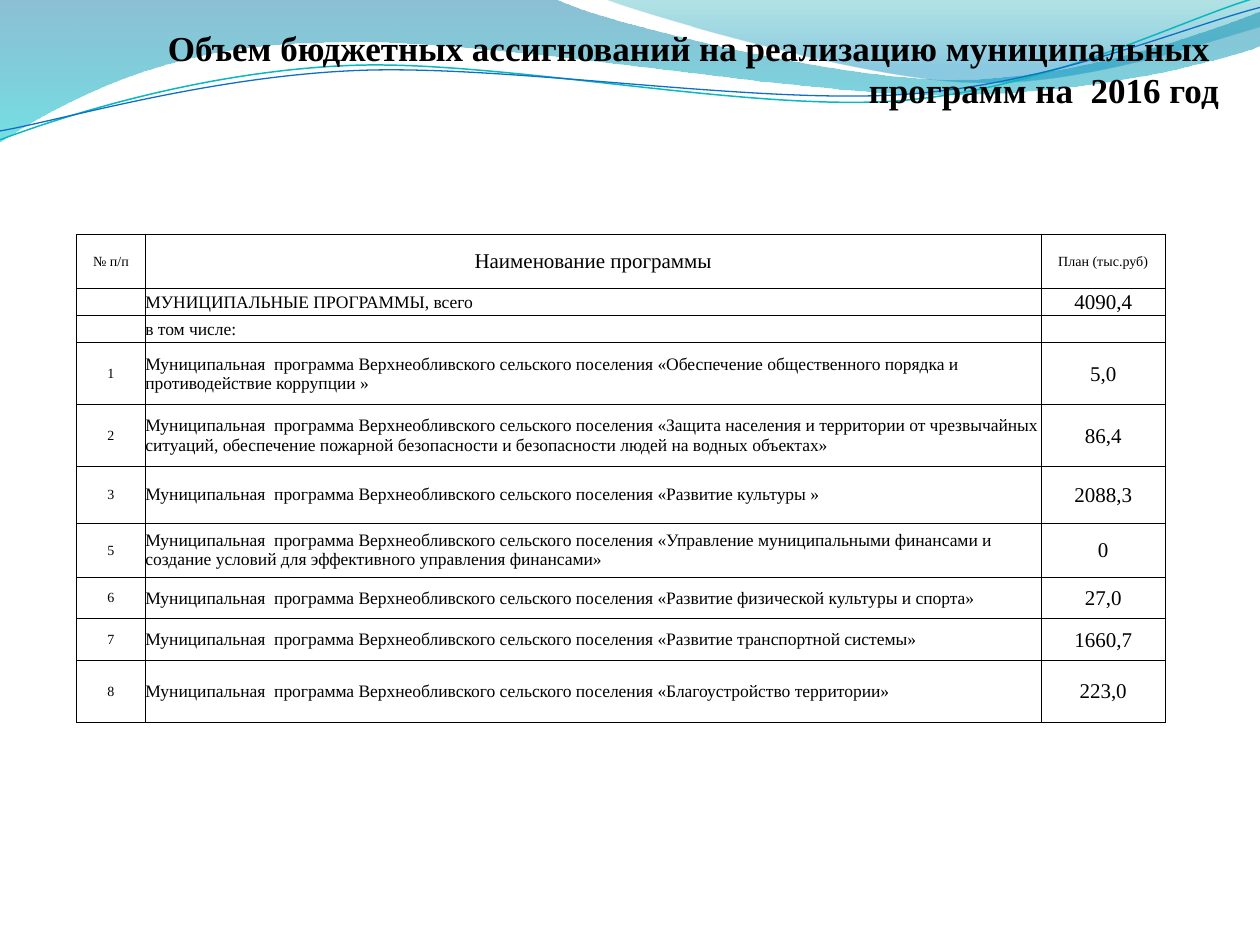
from dataclasses import dataclass
from math import cos, radians, sin

from lxml.etree import SubElement
from pptx import Presentation
from pptx.dml.color import RGBColor as Rgb
from pptx.enum.text import MSO_ANCHOR as Anchor, PP_ALIGN as Align
from pptx.oxml import parse_xml
from pptx.oxml.ns import nsdecls, qn
from pptx.util import Pt


@dataclass(frozen=True)
class Theme:
    font: str = "Times New Roman"
    ink: str = "000000"
    title: float = 20
    head: float = 12
    body: float = 10
    small: float = 8
    rule: float = 0.5


THEME = Theme()
TILT = 2.7

# Points are in inches from the corner of the band. One point is a straight
# step, and three are a Bezier step (two handles, then the end).
# Fill stops: position, colour, opacity in percent.
WAVES = [
    ([[(0, -0.01)], [(4.4, -0.01)],
      [(4.76, 0.17), (6.64, 0.63), (7.58, 0.63)],
      [(8.53, 0.63), (9.58, 0.26), (10, 0.09)], [(10.01, 0.36)],
      [(9.83, 0.44), (8.7, 0.76), (7.46, 0.75)],
      [(6.22, 0.75), (3.82, 0.28), (2.57, 0.34)],
      [(1.29, 0.35), (0.46, 0.83), (-0.01, 1.13)], [(0, -0.01)]],
     [(0, "0074A1", 45), (1, "00C6CF", 55)]),
    ([[(4.79, -0.01)], [(5.09, 0.11), (6.82, 0.62), (7.69, 0.65)],
      [(8.56, 0.69), (9.61, 0.32), (10, 0.21)], [(10, 0)], [(4.79, -0.01)]],
     [(0, "00A1A9", 30), (0.8, "008BBF", 45)]),
]
STRANDS = [
    ([[(0, 1.11)], [(0.48, 0.93), (1.58, 0.57), (2.77, 0.52)],
      [(3.95, 0.47), (5.93, 0.89), (7.13, 0.8)],
      [(8.33, 0.71), (9.38, 0.15), (9.98, -0.02)]], "0AB8BF", 0.85),
    ([[(0, 1.04)], [(0.47, 0.96), (1.64, 0.61), (2.83, 0.56)],
      [(4.03, 0.51), (5.97, 0.83), (7.17, 0.75)],
      [(8.36, 0.67), (9.41, 0.21), (10, 0.06)]], "0F6FC6", 0.75),
]

TITLE = ["Объем бюджетных ассигнований на реализацию муниципальных  ",
         "программ на  2016 год "]
HEADS = ["№ п/п", "Наименование программы", "План (тыс.руб)"]
LEAD = "Муниципальная  программа Верхнеобливского сельского поселения "
TOTALS = [("", "МУНИЦИПАЛЬНЫЕ ПРОГРАММЫ, всего", "4090,4"),
          ("", "в том числе:", "")]
PLANS = [
    ("1", "«Обеспечение общественного порядка и противодействие коррупции »",
     "5,0"),
    ("2", "«Защита населения и территории от чрезвычайных ситуаций, "
     "обеспечение пожарной безопасности и безопасности людей на водных "
     "объектах»", "86,4"),
    ("3", "«Развитие культуры »", "2088,3"),
    ("5", "«Управление муниципальными финансами и создание условий для "
     "эффективного управления финансами»", "0"),
    ("6", "«Развитие физической культуры и спорта»", "27,0"),
    ("7", "«Развитие транспортной системы»", "1660,7"),
    ("8", "«Благоустройство территории»", "223,0"),
]
WIDTHS = [39.3, 511.9, 70.9]
HEIGHTS = [31, 15.5, 15.5, 35.3, 35.3, 32.5, 31, 23.6, 23.8, 35.4]


def turn(steps, angle):
    """Turn all points about the middle between the first and last one."""
    (ax, ay), (bx, by) = steps[0][-1], steps[-1][-1]
    mx, my = (ax + bx) / 2, (ay + by) / 2
    c, s = cos(radians(angle)), sin(radians(angle))
    return [[(mx + (x - mx) * c - (y - my) * s,
              my + (x - mx) * s + (y - my) * c) for x, y in step]
            for step in steps]


def add_curve(slide, left, top, steps, close):
    steps = [[(Pt(left + x * 72), Pt(top + y * 72)) for x, y in step]
             for step in steps]
    pen = slide.shapes.build_freeform(*steps[0][0])
    pen.add_line_segments([step[-1] for step in steps[1:]], close=close)
    shape = pen.convert_to_shape()
    shape.shadow.inherit = False
    lines = list(shape._element.spPr.iter(qn("a:lnTo")))
    for line, step in zip(lines, steps[1:]):
        if len(step) == 3:
            dots = "".join(f'<a:pt x="{x - shape.left}" y="{y - shape.top}"/>'
                           for x, y in step)
            line.getparent().replace(line, parse_xml(
                f'<a:cubicBezTo {nsdecls("a")}>{dots}</a:cubicBezTo>'))
    return shape


def add_band(slide, left, top):
    for steps, stops in WAVES:
        wave = add_curve(slide, left, top, steps, True)
        wave.line.fill.background()
        wave.fill.gradient()
        wave.fill.gradient_angle = 270
        for stop, (place, color, _) in zip(wave.fill.gradient_stops, stops):
            stop.position = place
            stop.color.rgb = Rgb.from_string(color)
        tints = wave._element.spPr.iter(qn("a:srgbClr"))
        for tint, (_, _, alpha) in zip(tints, stops):
            SubElement(tint, qn("a:alpha"), val=str(alpha * 1000))
    for steps, color, width in STRANDS:
        strand = add_curve(slide, left, top, turn(steps, TILT), False)
        strand.rotation = 360 - TILT
        strand.fill.background()
        strand.line.color.rgb = Rgb.from_string(color)
        strand.line.width = Pt(width)


def set_font(par, size, bold=False):
    par.font.name = THEME.font
    par.font.size = Pt(size)
    par.font.bold = bold
    par.font.color.rgb = Rgb.from_string(THEME.ink)


def add_title(slide, left, top, width, height):
    box = slide.shapes.add_textbox(Pt(left), Pt(top), Pt(width), Pt(height))
    frame = box.text_frame
    frame.word_wrap = True
    frame.vertical_anchor = Anchor.MIDDLE
    frame.text = "\n".join(TITLE)
    for par in frame.paragraphs:
        par.alignment = Align.RIGHT
        set_font(par, THEME.title, True)


def set_cell(cell, text, size, align, inset):
    cell.text = text
    cell.vertical_anchor = Anchor.MIDDLE
    cell.margin_left = cell.margin_right = cell.margin_top = Pt(inset)
    cell.margin_bottom = 0
    cell.fill.background()
    par = cell.text_frame.paragraphs[0]
    par.alignment = align
    set_font(par, size)
    if not text:  # keeps an empty row from growing
        SubElement(par._p, qn("a:endParaRPr"), sz=str(int(size * 100)))
    props = cell._tc.get_or_add_tcPr()
    for i, side in enumerate("LRTB"):
        props.insert(i, parse_xml(
            f'<a:ln{side} {nsdecls("a")} w="{Pt(THEME.rule)}"><a:solidFill>'
            f'<a:srgbClr val="{THEME.ink}"/></a:solidFill></a:ln{side}>'))


def add_plan(slide, left, top):
    rows = [HEADS, *TOTALS, *((n, LEAD + name, sum_) for n, name, sum_ in PLANS)]
    table = slide.shapes.add_table(
        len(rows), len(WIDTHS), Pt(left), Pt(top),
        Pt(sum(WIDTHS)), Pt(sum(HEIGHTS))).table
    table.first_row = table.horz_banding = False
    for col, width in zip(table.columns, WIDTHS):
        col.width = Pt(width)
    for r, (row, height) in enumerate(zip(rows, HEIGHTS)):
        table.rows[r].height = Pt(height)
        sizes = ((THEME.small, THEME.body, THEME.head) if r
                 else (THEME.small, THEME.head, THEME.small))
        for c, (text, size) in enumerate(zip(row, sizes)):
            align = Align.LEFT if r and c == 1 else Align.CENTER
            inset = 0.6 if r and c == 2 else 0
            set_cell(table.cell(r, c), text, size, align, inset)


def main():
    deck = Presentation()
    deck.slide_width, deck.slide_height = Pt(720), Pt(540)
    slide = deck.slides.add_slide(deck.slide_layouts[6])
    add_band(slide, 0, 0)
    add_plan(slide, 43.8, 134)
    add_title(slide, 16.7, 11.5, 692, 55.5)
    deck.save("out.pptx")


if __name__ == "__main__":
    main()
